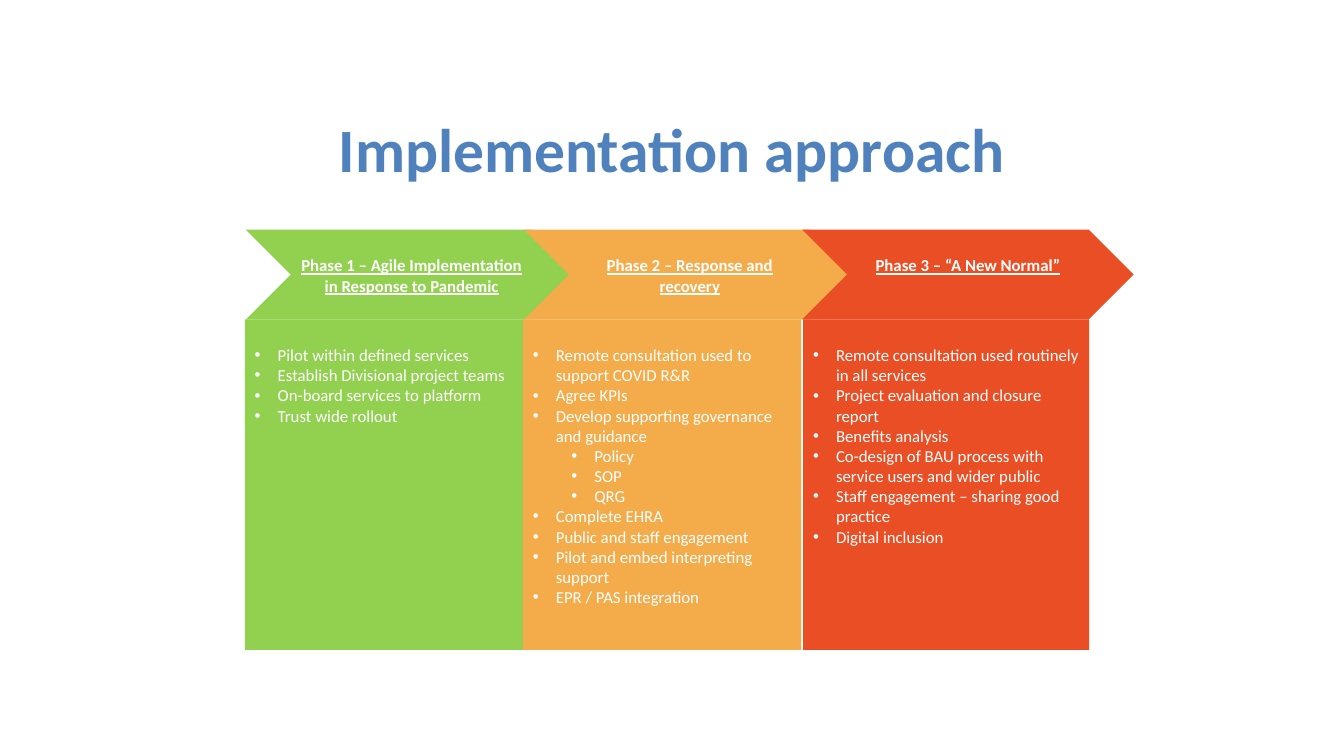
"""Build a slide with three coloured phases of an implementation approach."""
import dataclasses

import lxml.etree
import pptx
import pptx.dml.color
import pptx.enum.shapes
import pptx.enum.text
import pptx.oxml.ns
import pptx.util

Cm = pptx.util.Cm
Shapes = pptx.enum.shapes.MSO_SHAPE
Anchor = pptx.enum.text.MSO_ANCHOR
Align = pptx.enum.text.PP_ALIGN


@dataclasses.dataclass(frozen=True)
class Theme:
    """Hold the font, type sizes and colours of the slide."""

    font: str = "Calibri"
    title_size: int = 44
    body_size: int = 12
    title: str = "4F81BD"
    text: str = "FFFFFF"
    green: str = "92D050"
    orange: str = "F4AB4A"
    red: str = "EA4E24"


@dataclasses.dataclass(frozen=True)
class Phase:
    """Describe one phase; each point is a level and its wording."""

    heading: str
    color: str
    left: float
    width: float
    points: tuple


THEME = Theme()
PHASE_STEP = 7.01
CHEVRON_LEFT, CHEVRON_TOP = 6.2, 5.79
CHEVRON_WIDTH, CHEVRON_HEIGHT = 8.35, 2.26
PANEL_TOP, PANEL_HEIGHT = 8.05, 8.33
TEXT_INSET = 0.64
BULLET_HANG, LEVEL_INDENT = 0.58, 0.97

PHASES = (
    Phase("Phase 1 – Agile Implementation in Response to Pandemic", THEME.green, 6.17, 7.01, (
        (0, "Pilot within defined services"),
        (0, "Establish Divisional project teams"),
        (0, "On-board services to platform"),
        (0, "Trust wide rollout"),
    )),
    Phase("Phase 2 – Response and recovery", THEME.orange, 13.18, 7.01, (
        (0, "Remote consultation used to support COVID R&R"),
        (0, "Agree KPIs"),
        (0, "Develop supporting governance and guidance"),
        (1, "Policy"),
        (1, "SOP"),
        (1, "QRG"),
        (0, "Complete EHRA"),
        (0, "Public and staff engagement"),
        (0, "Pilot and embed interpreting support"),
        (0, "EPR / PAS integration"),
    )),
    Phase("Phase 3 – “A New Normal”", THEME.red, 20.24, 7.21, (
        (0, "Remote consultation used routinely in all services"),
        (0, "Project evaluation and closure report"),
        (0, "Benefits analysis"),
        (0, "Co-design of BAU process with service users and wider public"),
        (0, "Staff engagement – sharing good practice"),
        (0, "Digital inclusion"),
    )),
)


def rgb(value):
    """Turn a hexadecimal string into a colour."""
    return pptx.dml.color.RGBColor.from_string(value)


def style(para, size, color, align=Align.LEFT, bold=False, underline=False):
    """Set the font and alignment of a paragraph."""
    para.alignment = align
    para.font.name = THEME.font
    para.font.size = pptx.util.Pt(size)
    para.font.color.rgb = rgb(color)
    para.font.bold = bold
    para.font.underline = underline


def add_bullet(para, level):
    """Give a paragraph a hanging bullet at its level."""
    para.level = level
    properties = para._p.get_or_add_pPr()
    properties.set("marL", str(Cm(BULLET_HANG + level * LEVEL_INDENT)))
    properties.set("indent", str(-Cm(BULLET_HANG)))
    font = lxml.etree.Element(pptx.oxml.ns.qn("a:buFont"), typeface="Arial")
    bullet = lxml.etree.Element(pptx.oxml.ns.qn("a:buChar"), char="•")
    properties.find(pptx.oxml.ns.qn("a:defRPr")).addprevious(font)
    font.addnext(bullet)


def add_block(page, preset, left, top, width, height, color):
    """Add a flat filled shape whose text starts near its top."""
    block = page.shapes.add_shape(preset, Cm(left), Cm(top), Cm(width), Cm(height))
    block.shadow.inherit = False
    block.fill.solid()
    block.fill.fore_color.rgb = rgb(color)
    block.line.fill.background()
    frame = block.text_frame
    frame.word_wrap = True
    frame.vertical_anchor = Anchor.TOP
    frame.margin_top = Cm(TEXT_INSET)
    return block


def add_title(page, wording):
    """Add the centred slide title."""
    box = page.shapes.add_textbox(Cm(5.51), Cm(2.13), Cm(22.86), Cm(3.18))
    frame = box.text_frame
    frame.word_wrap = True
    frame.vertical_anchor = Anchor.MIDDLE
    frame.text = wording
    style(frame.paragraphs[0], THEME.title_size, THEME.title, Align.CENTER, bold=True)


def add_panel(page, phase):
    """Add the panel that lists the points of a phase."""
    panel = add_block(page, Shapes.RECTANGLE, phase.left, PANEL_TOP,
                      phase.width, PANEL_HEIGHT, phase.color)
    frame = panel.text_frame
    frame.text = "\n".join(wording for level, wording in phase.points)
    for para, (level, wording) in zip(frame.paragraphs, phase.points):
        style(para, THEME.body_size, THEME.text)
        add_bullet(para, level)


def add_heading(page, index, phase):
    """Add the chevron that names a phase."""
    chevron = add_block(page, Shapes.CHEVRON, CHEVRON_LEFT + index * PHASE_STEP, CHEVRON_TOP,
                        CHEVRON_WIDTH, CHEVRON_HEIGHT, phase.color)
    frame = chevron.text_frame
    frame.margin_left = frame.margin_right = Cm(0.2)
    frame.text = phase.heading
    style(frame.paragraphs[0], THEME.body_size, THEME.text, Align.CENTER,
          bold=True, underline=True)


def main():
    """Build and save the deck."""
    deck = pptx.Presentation()
    deck.slide_width, deck.slide_height = Cm(33.87), Cm(19.05)
    page = deck.slides.add_slide(deck.slide_layouts[6])
    add_title(page, "Implementation approach")
    for index, phase in enumerate(PHASES):
        add_panel(page, phase)
        add_heading(page, index, phase)
    deck.save("out.pptx")


if __name__ == "__main__":
    main()
